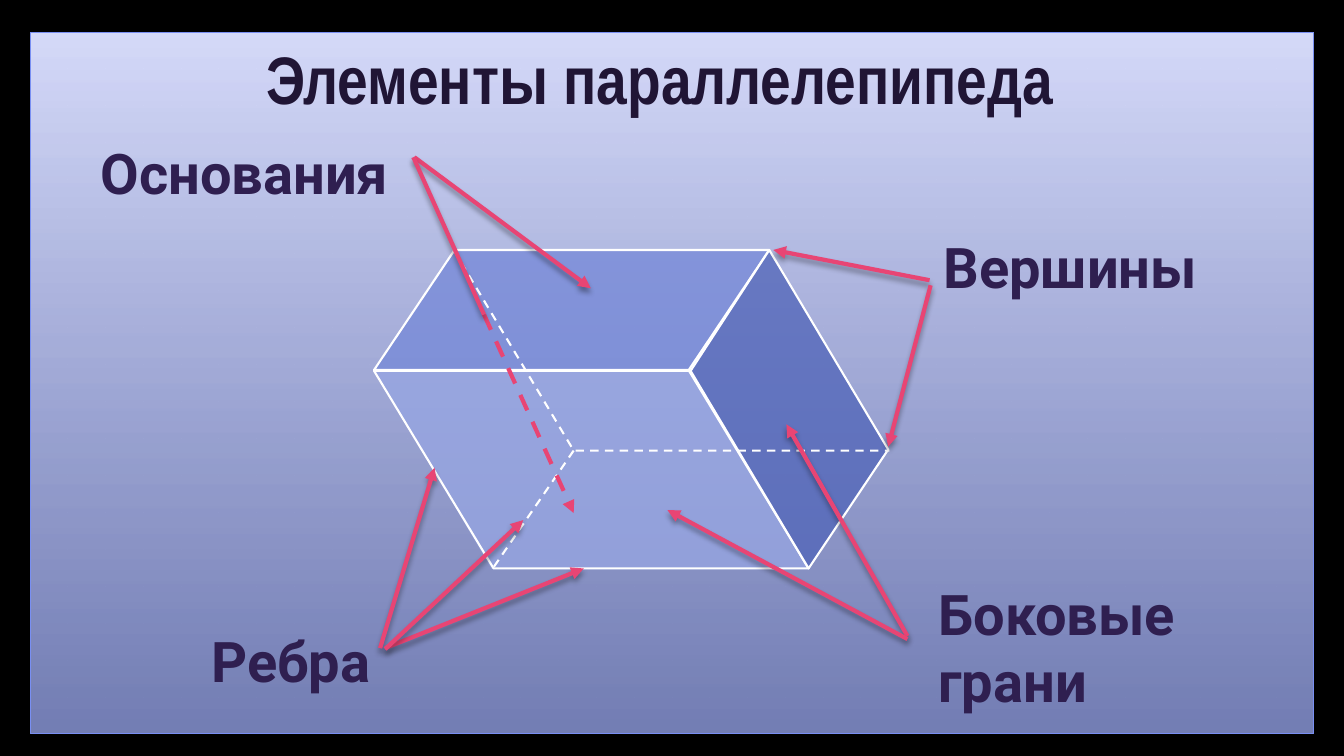
from lxml.etree import SubElement
from pptx import Presentation
from pptx.dml.color import RGBColor
from pptx.enum.dml import MSO_LINE
from pptx.enum.shapes import MSO_CONNECTOR, MSO_SHAPE
from pptx.enum.text import MSO_ANCHOR, MSO_AUTO_SIZE, PP_ALIGN
from pptx.oxml.ns import qn
from pptx.util import Inches, Pt


def rgb(hex_color):
    return RGBColor.from_string(hex_color)


def set_opacity(color_element, percent):
    SubElement(color_element, qn("a:alpha"), val=str(percent * 1000))


presentation = Presentation()
presentation.slide_width, presentation.slide_height = Inches(13.33), Inches(7.5)
slide = presentation.slides.add_slide(presentation.slide_layouts[5])
slide.background.fill.solid()
slide.background.fill.fore_color.rgb = rgb("000000")

# Gradient panel, placed behind the title
panel = slide.shapes.add_shape(
    MSO_SHAPE.RECTANGLE, Inches(0.3), Inches(0.32), Inches(12.73), Inches(6.96))
panel.shadow.inherit = False
panel.fill.gradient()
panel.fill.gradient_angle = 270
for stop, position, color in zip(panel.fill.gradient_stops, (0, 1), ("D6DBFA", "9DABF4")):
    stop.position = position
    stop.color.rgb = rgb(color)
set_opacity(panel._element.spPr.findall(".//" + qn("a:srgbClr"))[-1], 74)
panel.line.color.rgb = rgb("798FF2")
panel.line.width = Pt(0.75)
slide.shapes._spTree.insert(2, panel._element)

# Faces: corner points, or a box with the slant and vertical flip of a parallelogram
LIGHT, TOP, SIDE = "96A5E2", "657BD4", "2D44A4"
faces = [
    ((4.5, 2.48, 4.31, 1.98), 0.605, True, LIGHT, False),
    ([(4.5, 2.49), (5.67, 4.47), (4.88, 5.65), (3.71, 3.68)], None, False, LIGHT, False),
    ((4.89, 4.46, 3.92, 1.19), 0.671, False, LIGHT, False),
    ((3.71, 3.68, 4.31, 1.96), 0.605, True, LIGHT, True),
    ((3.71, 2.48, 3.92, 1.19), 0.671, False, TOP, True),
    ([(7.63, 2.48), (8.81, 4.46), (8.02, 5.64), (6.85, 3.68)], None, False, SIDE, True),
]
solid = slide.shapes.add_group_shape()
for outline, slant, flipped, color, outlined in faces:
    if slant is None:
        corners = [(Inches(x), Inches(y)) for x, y in outline]
        builder = solid.shapes.build_freeform(*corners[0])
        builder.add_line_segments(corners[1:], close=True)
        face = builder.convert_to_shape()
    else:
        face = solid.shapes.add_shape(MSO_SHAPE.PARALLELOGRAM, *map(Inches, outline))
        face.adjustments[0] = slant
    if flipped:
        face._element.spPr.xfrm.set("flipV", "1")
    face.shadow.inherit = False
    face.fill.solid()
    face.fill.fore_color.rgb = rgb(color)
    set_opacity(face._element.spPr.find(".//" + qn("a:srgbClr")), 50)
    if outlined:
        face.line.color.rgb = rgb("FFFFFF")
        face.line.width = Pt(1.5)
    else:
        face.line.fill.background()

# Hidden edges
builder = solid.shapes.build_freeform(Inches(4.5), Inches(2.48))
builder.add_line_segments(
    [(Inches(5.69), Inches(4.47)), (Inches(8.82), Inches(4.47))], close=False)
hidden_edges = builder.convert_to_shape()
hidden_edges.fill.background()
hidden_edges.shadow.inherit = False
hidden_edge = solid.shapes.add_connector(
    MSO_CONNECTOR.STRAIGHT, Inches(5.69), Inches(4.47), Inches(4.88), Inches(5.65))
SubElement(hidden_edge._element.spPr, qn("a:effectLst"))
for edge in (hidden_edges, hidden_edge):
    edge.line.color.rgb = rgb("FFFFFF")
    edge.line.width = Pt(1.5)
    edge.line.dash_style = MSO_LINE.DASH

# Pointers: start and end, dashed, arrowhead
pointers = [
    ((4.11, 1.56, 5.86, 2.86), False, True),
    ((4.8, 3.12, 5.69, 5.09), True, True),
    ((4.1, 1.56, 4.8, 3.12), False, False),
    ((9.22, 2.78, 7.67, 2.48), False, True),
    ((9.23, 2.83, 8.81, 4.43), False, True),
    ((9, 6.31, 7.8, 4.21), False, True),
    ((9, 6.34, 6.62, 5.06), False, True),
    ((3.77, 6.43, 4.31, 4.64), False, True),
    ((3.82, 6.43, 5.79, 5.64), False, True),
    ((3.82, 6.44, 5.19, 5.16), False, True),
]
for ends, dashed, arrowhead in pointers:
    pointer = slide.shapes.add_connector(MSO_CONNECTOR.STRAIGHT, *map(Inches, ends))
    pointer.line.color.rgb = rgb("E84574")
    pointer.line.width = Pt(3)
    if dashed:
        pointer.line.dash_style = MSO_LINE.DASH
    if arrowhead:
        SubElement(pointer.line._get_or_add_ln(), qn("a:tailEnd"), type="triangle")
    effects = SubElement(pointer._element.spPr, qn("a:effectLst"))
    if not dashed:
        shadow = SubElement(effects, qn("a:outerShdw"), blurRad=str(Pt(4)),
                            dist=str(Pt(3)), dir="5400000", rotWithShape="0")
        set_opacity(SubElement(shadow, qn("a:srgbClr"), val="000000"), 35)

# Title and labels
title = slide.shapes.title
texts = [
    ("Элементы параллелепипеда", (2.54, 0.32, 9.99, 0.91), 48, "Arial Narrow", "201535"),
    ("Ребра", (2, 6.17, 2.19, 0.77), 40, "Roboto", "2F1F50"),
    ("Основания", (0.9, 1.33, 3.46, 0.77), 40, "Roboto", "2F1F50"),
    ("Вершины", (9.26, 2.26, 2.92, 0.77), 40, "Roboto", "2F1F50"),
    ("Боковые грани", (9.21, 5.7, 3.62, 1.45), 40, "Roboto", "2F1F50"),
]
for text, box, size, font_name, color in texts:
    left, top, width, height = map(Inches, box)
    if font_name == "Arial Narrow":
        shape = title
        shape.left, shape.top, shape.width, shape.height = left, top, width, height
    else:
        shape = slide.shapes.add_textbox(left, top, width, height)
    frame = shape.text_frame
    frame.text = text
    frame.word_wrap = True
    frame.auto_size = MSO_AUTO_SIZE.SHAPE_TO_FIT_TEXT
    frame.vertical_anchor = MSO_ANCHOR.TOP
    paragraph = frame.paragraphs[0]
    paragraph.alignment = PP_ALIGN.LEFT
    font = paragraph.runs[0].font
    font.size, font.name, font.bold = Pt(size), font_name, True
    font.color.rgb = rgb(color)

presentation.save("out.pptx")
